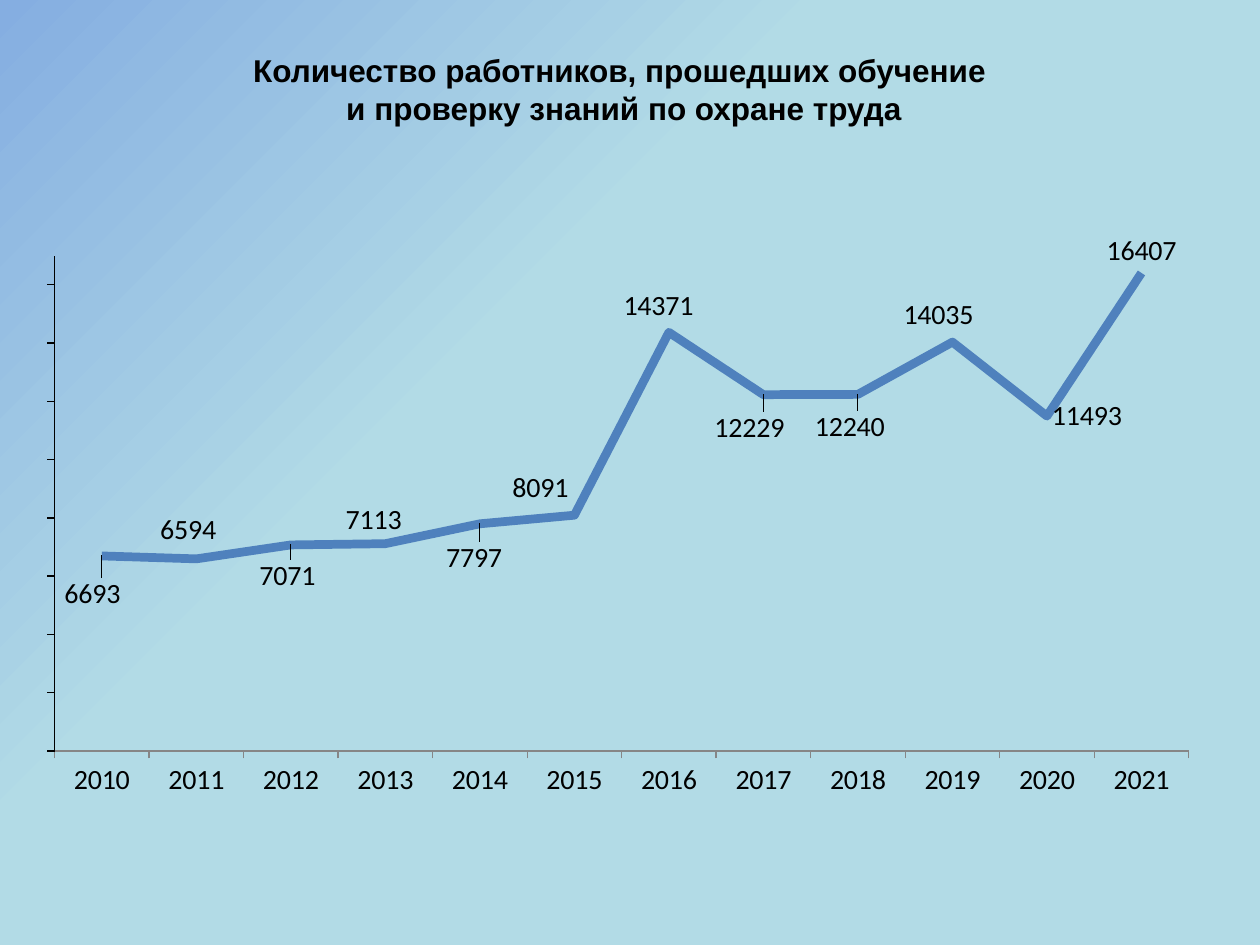
from copy import deepcopy

from lxml.etree import SubElement
from pptx import Presentation
from pptx.chart.data import CategoryChartData
from pptx.dml.color import RGBColor
from pptx.enum.chart import XL_CHART_TYPE as ChartType
from pptx.enum.chart import XL_LABEL_POSITION as LabelPos
from pptx.enum.chart import XL_TICK_LABEL_POSITION as TickLabelPos
from pptx.enum.chart import XL_TICK_MARK as TickMark
from pptx.enum.text import MSO_ANCHOR as Anchor
from pptx.enum.text import PP_ALIGN as Align
from pptx.oxml.ns import qn
from pptx.util import Emu, Pt

PX_PER_INCH = 126
SLIDE_SIZE = (1260, 945)
TITLE_BOX = (123, 45, 1002, 90)
CHART_BOX = (44, 234, 1173, 580)
PLOT_LAYOUT = {"layoutTarget": "inner", "xMode": "edge", "yMode": "edge",
               "x": 0.009, "y": 0.033, "w": 0.967, "h": 0.858}

TITLE = "Количество работников, прошедших обучение \vи проверку знаний по охране труда"
FIRST_YEAR = 2010
ABOVE, BELOW, RIGHT = LabelPos.ABOVE, LabelPos.BELOW, LabelPos.RIGHT
TRAINED = [
    (6693, BELOW, -9, 16), (6594, ABOVE, -8, -7), (7071, BELOW, -3, 9),
    (7113, ABOVE, -12, -2), (7797, BELOW, -6, 13), (8091, ABOVE, -34, -5),
    (14371, ABOVE, -10, -4), (12229, BELOW, -14, 12), (12240, BELOW, -8, 11),
    (14035, ABOVE, -14, -5), (11493, RIGHT, 0, 0), (16407, ABOVE, 0, 0),
]


def px(length):
    """Turn px into EMU."""
    return Emu(round(length * 914400 / PX_PER_INCH))


def color(hex_string):
    """Turn a hex string into a colour."""
    return RGBColor.from_string(hex_string)


def format_font(font, size, name="Calibri", bold=False, fill="000000"):
    """Set the look of a font."""
    font.size, font.name, font.bold = Pt(size), name, bold
    font.color.rgb = color(fill)


def write_text(frame, text, align=Align.LEFT, space_after=0, **font_format):
    """Write one paragraph of formatted text."""
    paragraph = frame.paragraphs[0]
    paragraph.text = text
    paragraph.alignment = align
    paragraph.space_after = Pt(space_after)
    for run in paragraph.runs:
        format_font(run.font, **font_format)


def format_line(line, hex_string, width):
    """Set the colour and width of a line."""
    line.color.rgb = color(hex_string)
    line.width = Pt(width)


def make_layout(parent, settings):
    """Build a manual chart layout from its settings."""
    layout = SubElement(parent, qn("c:layout"))
    manual = SubElement(layout, qn("c:manualLayout"))
    for tag, value in settings.items():
        SubElement(manual, qn(f"c:{tag}")).set("val", str(value))
    return layout


def paint_background(slide):
    """Fill the slide with a diagonal gradient that levels off."""
    fill = slide.background.fill
    fill.gradient()
    fill.gradient_angle = 315
    start, level = fill.gradient_stops
    start.color.rgb, start.position = color("85AEE1"), 0
    level.color.rgb, level.position = color("B2DBE6"), 0.38
    stops = slide.background._cSld.find(".//" + qn("a:gsLst"))
    end = deepcopy(stops[-1])
    end.set("pos", "100000")
    stops.append(end)


def place_title(slide, box):
    """Place the slide title in its box."""
    title = slide.shapes.title
    title.left, title.top, title.width, title.height = map(px, box)
    frame = title.text_frame
    frame.word_wrap = True
    frame.vertical_anchor = Anchor.TOP
    write_text(frame, TITLE, align=Align.CENTER, space_after=6,
               size=18, name="Arial", bold=True)


def format_axes(chart):
    """Style the year axis and the unlabelled count axis."""
    years, counts = chart.category_axis, chart.value_axis
    for axis in (years, counts):
        axis.has_major_gridlines = False
        axis.major_tick_mark = TickMark.OUTSIDE
        axis.minor_tick_mark = TickMark.NONE
    format_font(years.tick_labels.font, size=16)
    format_line(years.format.line, "868686", 0.75)
    format_line(counts.format.line, "000000", 0.75)
    counts.tick_label_position = TickLabelPos.NONE
    counts.minimum_scale, counts.maximum_scale = 0, 17000
    counts.major_unit = 2000


def label_points(series, box):
    """Show each count beside its point, shifted clear of the line."""
    labels = series.data_labels
    labels.show_value = True
    format_font(labels.font, size=16)
    for index, (_, position, dx, dy) in enumerate(TRAINED):
        label = series.points[index].data_label
        format_font(label.font, size=16)
        label.position = position
    for element, (_, _, dx, dy) in zip(series._element.iter(qn("c:dLbl")), TRAINED):
        if dx or dy:
            shift = {"x": round(dx / box[2], 3), "y": round(dy / box[3], 3)}
            element[0].addnext(make_layout(element, shift))


def place_chart(slide, box):
    """Place the line chart of trained workers in its box."""
    data = CategoryChartData()
    data.categories = [str(FIRST_YEAR + i) for i in range(len(TRAINED))]
    data.add_series("Series 1", [count for count, *_ in TRAINED])
    chart = slide.shapes.add_chart(ChartType.LINE, *map(px, box), data).chart
    chart.has_title = chart.has_legend = False
    format_font(chart.font, size=10)
    format_axes(chart)
    plot = chart.plots[0]
    plot.vary_by_categories = False
    trained = plot.series[0]
    trained.smooth = False
    format_line(trained.format.line, "4F81BD", 5)
    label_points(trained, box)
    plot_area = chart._chartSpace.find(".//" + qn("c:plotArea"))
    for layout in plot_area.findall(qn("c:layout")):
        plot_area.remove(layout)
    plot_area.insert(0, make_layout(plot_area, PLOT_LAYOUT))


def main():
    """Build the slide and save it."""
    deck = Presentation()
    deck.slide_width, deck.slide_height = map(px, SLIDE_SIZE)
    slide = deck.slides.add_slide(deck.slide_layouts[5])
    paint_background(slide)
    place_chart(slide, CHART_BOX)
    place_title(slide, TITLE_BOX)
    deck.save("out.pptx")


if __name__ == "__main__":
    main()
